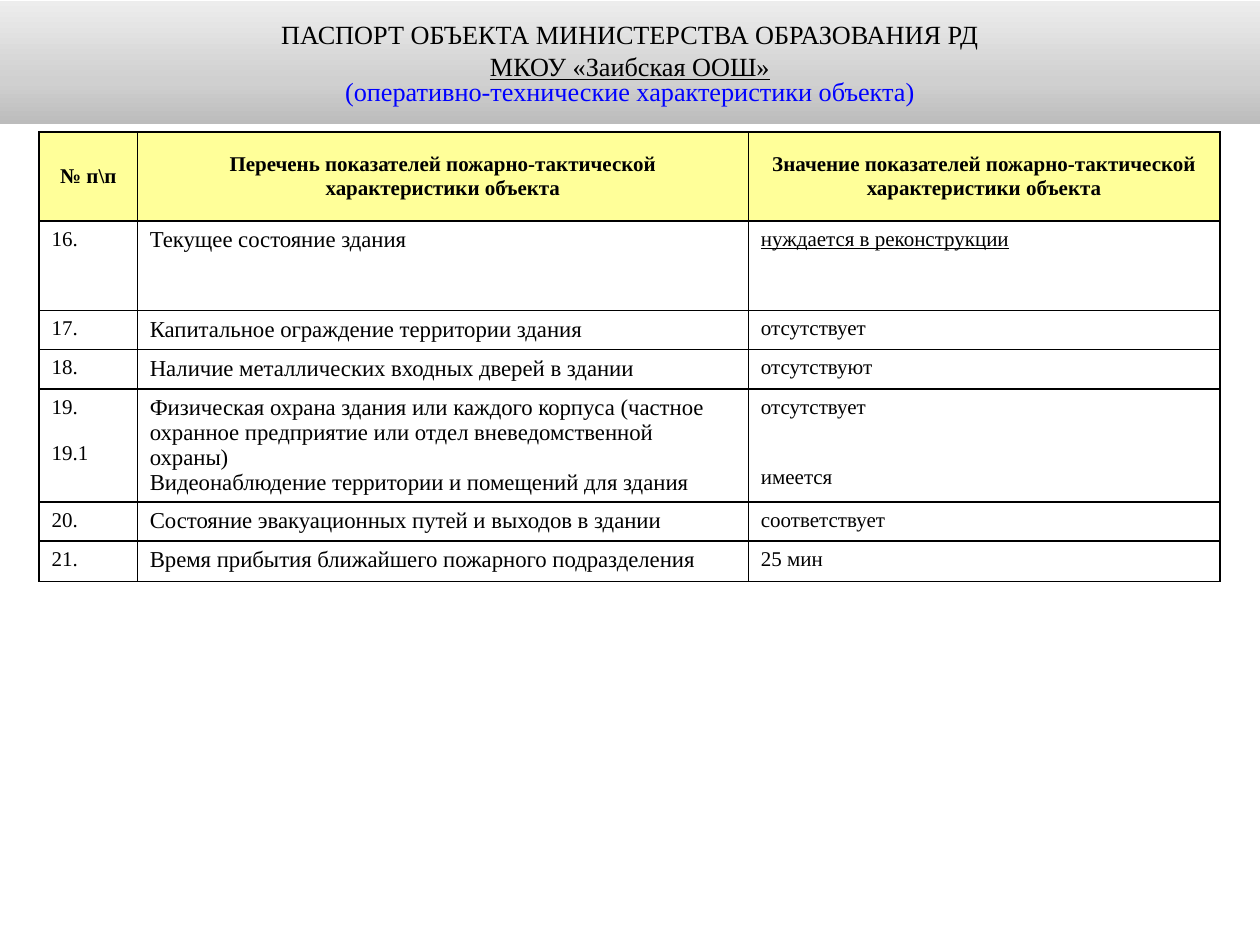
import copy

import pptx
import pptx.dml.color
import pptx.enum.shapes
import pptx.enum.text
import pptx.oxml
import pptx.oxml.ns
import pptx.util
from pptx.util import Cm

FONT = "Times New Roman"
LINE_GAP = 13.4  # points, one line of 12 pt text
COLUMN_WIDTHS = [1.98, 12.32, 9.5]
ROW_HEIGHTS = [1.8, 1.8, 0.79, 0.79, 2.28, 0.79, 0.81]
COLUMN_SIZES = [12, 13, 12]

HEADINGS = [
    "№ п\\п",
    "Перечень показателей пожарно-тактической характеристики объекта",
    "Значение показателей пожарно-тактической характеристики объекта",
]
ROWS = [
    ["16.", "Текущее состояние здания", "нуждается в реконструкции"],
    ["17.", "Капитальное ограждение территории здания", "отсутствует"],
    ["18.", "Наличие металлических входных дверей в здании", "отсутствуют"],
    ["19.\n19.1",
     "Физическая охрана здания или каждого корпуса (частное охранное предприятие "
     "или отдел вневедомственной охраны)\n"
     "Видеонаблюдение территории и помещений для здания",
     "отсутствует\nимеется"],
    ["20.", "Состояние эвакуационных путей и выходов в здании", "соответствует"],
    ["21.", "Время прибытия ближайшего пожарного подразделения", "25 мин"],
]


def color(hex_string):
    return pptx.dml.color.RGBColor.from_string(hex_string)


def style_paragraph(paragraph, size, hex_string="000000", bold=False,
                    underline=False, centered=False):
    font = paragraph.font
    font.name = FONT
    font.size = pptx.util.Pt(size)
    font.bold = bold
    font.underline = underline
    font.color.rgb = color(hex_string)
    if centered:
        paragraph.alignment = pptx.enum.text.PP_ALIGN.CENTER


def add_borders(cell):
    properties = cell._tc.get_or_add_tcPr()
    namespace = pptx.oxml.ns.nsdecls("a")
    for position, side in enumerate(("lnL", "lnR", "lnT", "lnB")):
        properties.insert(position, pptx.oxml.parse_xml(
            f'<a:{side} {namespace} w="12700"><a:solidFill>'
            f'<a:srgbClr val="000000"/></a:solidFill></a:{side}>'))


def fill_cell(cell, text, size, fill, heading=False):
    cell.fill.solid()
    cell.fill.fore_color.rgb = color(fill)
    cell.margin_left = cell.margin_right = Cm(0.25)
    cell.margin_top = cell.margin_bottom = Cm(0.13)
    if heading:
        cell.vertical_anchor = pptx.enum.text.MSO_ANCHOR.MIDDLE
    cell.text = text
    for paragraph in cell.text_frame.paragraphs:
        style_paragraph(paragraph, size, bold=heading, centered=heading)
    add_borders(cell)


def add_indicator_table(slide):
    table = slide.shapes.add_table(
        len(ROW_HEIGHTS), len(COLUMN_WIDTHS), Cm(0.79), Cm(2.66),
        Cm(sum(COLUMN_WIDTHS)), Cm(sum(ROW_HEIGHTS))).table
    table.horz_banding = False
    for column, width in zip(table.columns, COLUMN_WIDTHS):
        column.width = Cm(width)
    for row, height in zip(table.rows, ROW_HEIGHTS):
        row.height = Cm(height)
    for index, heading in enumerate(HEADINGS):
        fill_cell(table.cell(0, index), heading, 12, "FFFF99", heading=True)
    for row_index, texts in enumerate(ROWS, start=1):
        for index, text in enumerate(texts):
            fill_cell(table.cell(row_index, index), text, COLUMN_SIZES[index], "FFFFFF")
    # Building state is underlined; row 19 has its second entries set lower
    table.cell(1, 2).text_frame.paragraphs[0].font.underline = True
    for index, lines in ((0, 1), (2, 2)):
        second = table.cell(4, index).text_frame.paragraphs[1]
        second.space_before = pptx.util.Pt(lines * LINE_GAP)


def set_gradient(shape, stops, angle):
    shape.fill.gradient()
    shape.fill.gradient_angle = angle
    stop_list = shape._element.spPr.find(".//" + pptx.oxml.ns.qn("a:gsLst"))
    while len(stop_list) < len(stops):
        stop_list.append(copy.deepcopy(stop_list[0]))
    for stop, (position, hex_string) in zip(shape.fill.gradient_stops, stops):
        stop.position = position
        stop.color.rgb = color(hex_string)


def add_title_band(slide):
    shape = slide.shapes.add_shape(
        pptx.enum.shapes.MSO_SHAPE.RECTANGLE, 0, Cm(0.02), Cm(25.4), Cm(2.49))
    shape.shadow.inherit = False
    shape.line.fill.background()
    set_gradient(shape, [(0, "BCBCBC"), (0.35, "D0D0D0"), (1, "EDEDED")], 90)

    frame = shape.text_frame
    frame.word_wrap = True
    frame.vertical_anchor = pptx.enum.text.MSO_ANCHOR.MIDDLE
    frame.text = ("ПАСПОРТ ОБЪЕКТА МИНИСТЕРСТВА ОБРАЗОВАНИЯ РД\n"
                  "МКОУ «Заибская ООШ»\n"
                  "(оперативно-технические характеристики объекта)")
    ministry, school, subtitle = frame.paragraphs
    style_paragraph(ministry, 15, centered=True)
    style_paragraph(school, 15, underline=True, centered=True)
    style_paragraph(subtitle, 15, "0000FF", centered=True)
    subtitle.line_spacing = 0.8


def main():
    presentation = pptx.Presentation()
    presentation.slide_width = Cm(25.4)
    presentation.slide_height = Cm(19.05)
    slide = presentation.slides.add_slide(presentation.slide_layouts[6])
    add_indicator_table(slide)
    add_title_band(slide)
    presentation.save("out.pptx")


if __name__ == "__main__":
    main()
